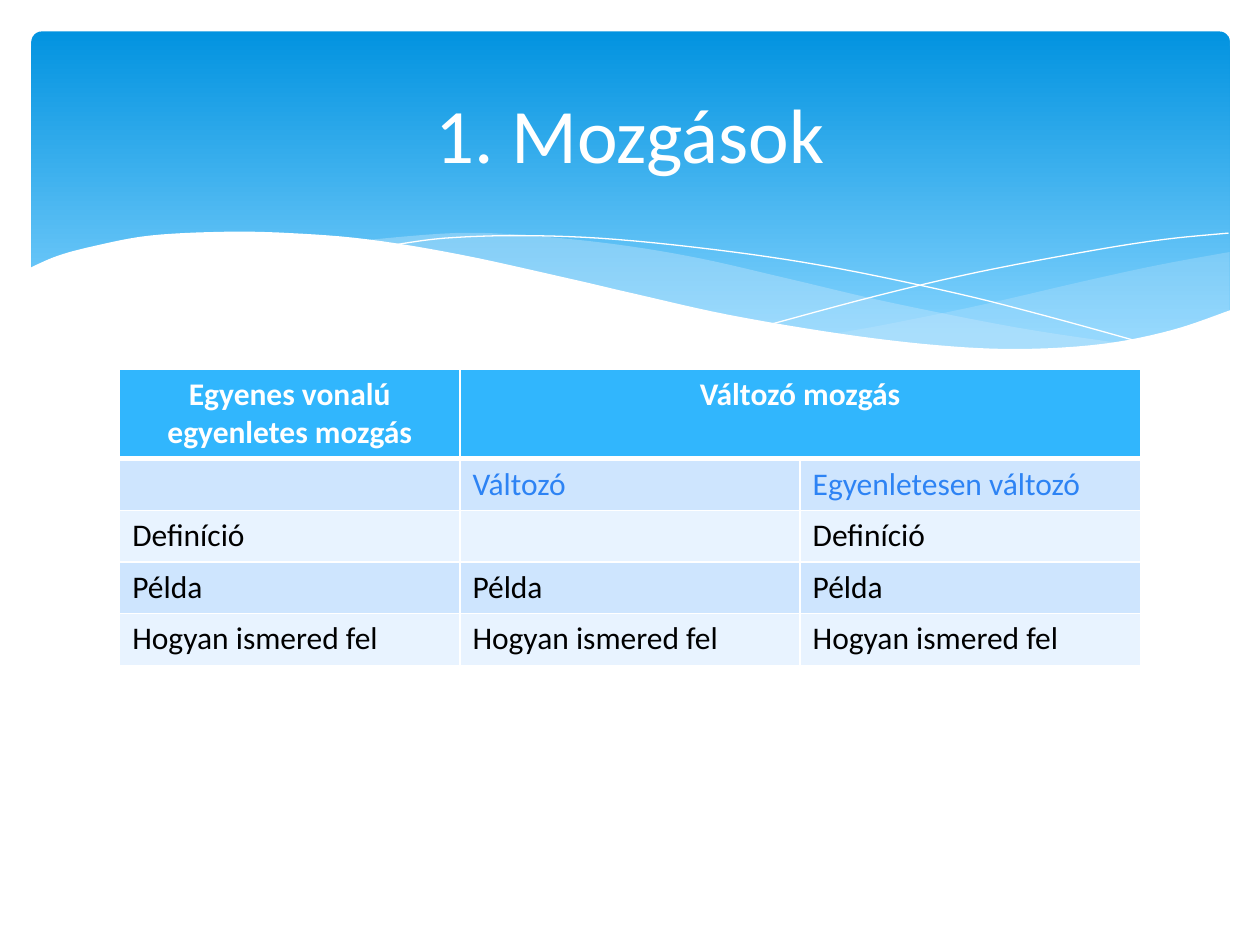
from lxml import etree
from pptx import Presentation
from pptx.dml.color import RGBColor
from pptx.enum.shapes import MSO_SHAPE
from pptx.enum.text import MSO_ANCHOR, PP_ALIGN
from pptx.oxml.ns import qn
from pptx.util import Inches, Pt

ROUNDED = MSO_SHAPE.ROUNDED_RECTANGLE
MIDDLE = MSO_ANCHOR.MIDDLE
CENTER, LEFT = PP_ALIGN.CENTER, PP_ALIGN.LEFT

WHITE = RGBColor(0xFF, 0xFF, 0xFF)
BLACK = RGBColor(0, 0, 0)
DEEP_BLUE = RGBColor(0x02, 0x93, 0xE0)
SKY_BLUE = RGBColor(0x83, 0xD3, 0xFE)
MIST = RGBColor(0xC6, 0xE7, 0xFC)
HEADER_BLUE = RGBColor(0x31, 0xB6, 0xFD)
SUBHEAD_BLUE = RGBColor(0x2D, 0x83, 0xF4)
BAND_DARK = RGBColor(0xCE, 0xE5, 0xFE)
BAND_LIGHT = RGBColor(0xE8, 0xF3, 0xFF)

# Each wave is a list of strands; a strand is a smooth curve through its points.
RIGHT_CREST = [
    [(9.76, 2), (9.21, 2.1), (8.61, 2.23), (7.79, 2.42), (7.06, 2.57), (6.61, 2.65)],
    [(6.61, 2.65), (7.19, 2.72), (7.81, 2.77), (8.44, 2.77), (8.97, 2.7),
     (9.42, 2.59), (9.76, 2.47)],
]
LONG_SWELL = [
    [(8.93, 2.73), (8.07, 2.6), (7.06, 2.4), (6.29, 2.22), (5.55, 2.05),
     (4.89, 1.94), (4.2, 1.87), (3.61, 1.85), (2.86, 1.91)],
    [(2.86, 1.91), (3.62, 2.03), (4.49, 2.22), (5.3, 2.4), (6.01, 2.55),
     (6.8, 2.68), (7.48, 2.76), (8.07, 2.78), (8.57, 2.77), (8.93, 2.73)],
]
FALLING_LINE = [[(3.09, 1.95), (3.53, 1.89), (4.16, 1.87), (4.89, 1.9), (5.82, 2),
                 (6.65, 2.13), (7.6, 2.33), (8.31, 2.51), (9.07, 2.72)]]
RISING_LINE = [[(6.13, 2.57), (6.95, 2.35), (7.76, 2.16), (8.66, 1.99),
                (9.24, 1.9), (9.75, 1.85)]]
WHITE_FOOT = [
    [(9.77, 2.46), (9.3, 2.62), (8.75, 2.73), (8.09, 2.77), (7.44, 2.74),
     (6.68, 2.65), (5.79, 2.5), (5.03, 2.33), (4.47, 2.2), (3.65, 2.02),
     (2.92, 1.9), (2.3, 1.85), (1.77, 1.84), (1.19, 1.87), (0.76, 1.95),
     (0.46, 2.03), (0.23, 2.13)],
    [(0.23, 3.29), (9.77, 3.29)],
]

MOTION_ROWS = [
    ["Egyenes vonalú egyenletes mozgás", "Változó mozgás", ""],
    ["", "Változó", "Egyenletesen változó"],
    ["Definíció", "", "Definíció"],
    ["Példa"] * 3,
    ["Hogyan ismered fel"] * 3,
]


def smooth(points, steps=6):
    """Return a Catmull-Rom curve through the points as a list of points."""
    padded = [points[0], *points, points[-1]]
    curve = [points[0]]
    for a, b, c, d in zip(padded, padded[1:], padded[2:], padded[3:]):
        for step in range(1, steps + 1):
            t = step / steps
            curve.append(tuple(
                (2 * q + (r - p) * t + (2 * p - 5 * q + 4 * r - s) * t ** 2
                 + (3 * q - p - 3 * r + s) * t ** 3) / 2
                for p, q, r, s in zip(a, b, c, d)))
    return curve


class SlideStyle:
    """Holds the font and the slide that elements are added to."""

    def __init__(self, slide, font="Calibri"):
        self.slide = slide
        self.font = font

    def set_text(self, frame, text, size, color, bold=False, align=LEFT):
        frame.text = text
        paragraph = frame.paragraphs[0]
        paragraph.alignment = align
        font = paragraph.runs[0].font if paragraph.runs else paragraph.font
        font.name, font.size, font.bold = self.font, Pt(size), bold
        font.color.rgb = color

    def banner(self, left, top, width, height):
        banner = self.slide.shapes.add_shape(
            ROUNDED, Inches(left), Inches(top), Inches(width), Inches(height))
        banner.adjustments[0] = 0.03
        banner.shadow.inherit = False
        banner.line.fill.background()
        banner.fill.gradient()
        banner.fill.gradient_angle = 270
        stops = banner.fill.gradient_stops
        for stop, position, color in zip(stops, (0, 0.9), (DEEP_BLUE, SKY_BLUE)):
            stop.position = position
            stop.color.rgb = color

    def outline(self, strands, closed):
        points = [(Inches(x), Inches(y)) for strand in strands for x, y in smooth(strand)]
        builder = self.slide.shapes.build_freeform(*points[0])
        builder.add_line_segments(points[1:], close=closed)
        shape = builder.convert_to_shape()
        shape.shadow.inherit = False
        return shape

    def wave(self, strands, color, opacity=100):
        wave = self.outline(strands, closed=True)
        wave.line.fill.background()
        wave.fill.solid()
        wave.fill.fore_color.rgb = color
        if opacity < 100:
            tint = wave.element.find(".//" + qn("a:srgbClr"))
            etree.SubElement(tint, qn("a:alpha"), val=str(opacity * 1000))

    def wave_line(self, strands):
        line = self.outline(strands, closed=False)
        line.fill.background()
        line.line.color.rgb = WHITE
        line.line.width = Pt(0)

    def title(self, text, left, top, width, height):
        box = self.slide.shapes.add_textbox(
            Inches(left), Inches(top), Inches(width), Inches(height))
        box.text_frame.word_wrap = True
        box.text_frame.vertical_anchor = MIDDLE
        self.set_text(box.text_frame, text, 44, WHITE, align=CENTER)

    def borders(self, cell, **widths):
        properties = cell._tc.get_or_add_tcPr()
        for side in "LRTB":
            edge = etree.SubElement(properties, qn(f"a:ln{side}"),
                                    w=str(Pt(widths.get(side, 1))))
            paint = etree.SubElement(edge, qn("a:solidFill"))
            etree.SubElement(paint, qn("a:srgbClr"), val=str(WHITE))

    def table(self, rows, left, top, column_width, header_height, row_height):
        columns = len(rows[0])
        height = header_height + row_height * (len(rows) - 1)
        table = self.slide.shapes.add_table(
            len(rows), columns, Inches(left), Inches(top),
            Inches(column_width * columns), Inches(height)).table
        for column in table.columns:
            column.width = Inches(column_width)
        for index, (row, texts) in enumerate(zip(table.rows, rows)):
            row.height = Inches(row_height if index else header_height)
            for cell, text in zip(row.cells, texts):
                if index == 0:
                    fill, color = HEADER_BLUE, WHITE
                    self.borders(cell, B=3)
                else:
                    fill = BAND_DARK if index % 2 else BAND_LIGHT
                    color = SUBHEAD_BLUE if index == 1 else BLACK
                    self.borders(cell, T=3 if index == 1 else 1)
                cell.fill.solid()
                cell.fill.fore_color.rgb = fill
                self.set_text(cell.text_frame, text, 18, color, bold=index == 0,
                              align=LEFT if index else CENTER)
        table.cell(0, 1).merge(table.cell(0, 2))


def main():
    deck = Presentation()
    deck.slide_width, deck.slide_height = Inches(10), Inches(7.5)
    style = SlideStyle(deck.slides.add_slide(deck.slide_layouts[6]))
    style.banner(0.25, 0.25, 9.51, 2.7)
    style.wave(RIGHT_CREST, MIST, opacity=29)
    style.wave(LONG_SWELL, MIST, opacity=40)
    style.wave_line(FALLING_LINE)
    style.wave_line(RISING_LINE)
    style.wave(WHITE_FOOT, WHITE)
    style.table(MOTION_ROWS, 0.95, 2.93, column_width=2.7,
                header_height=0.7, row_height=0.41)
    style.title("1. Mozgások", 0.5, 0.37, 9, 1.37)
    deck.save("out.pptx")


if __name__ == "__main__":
    main()
